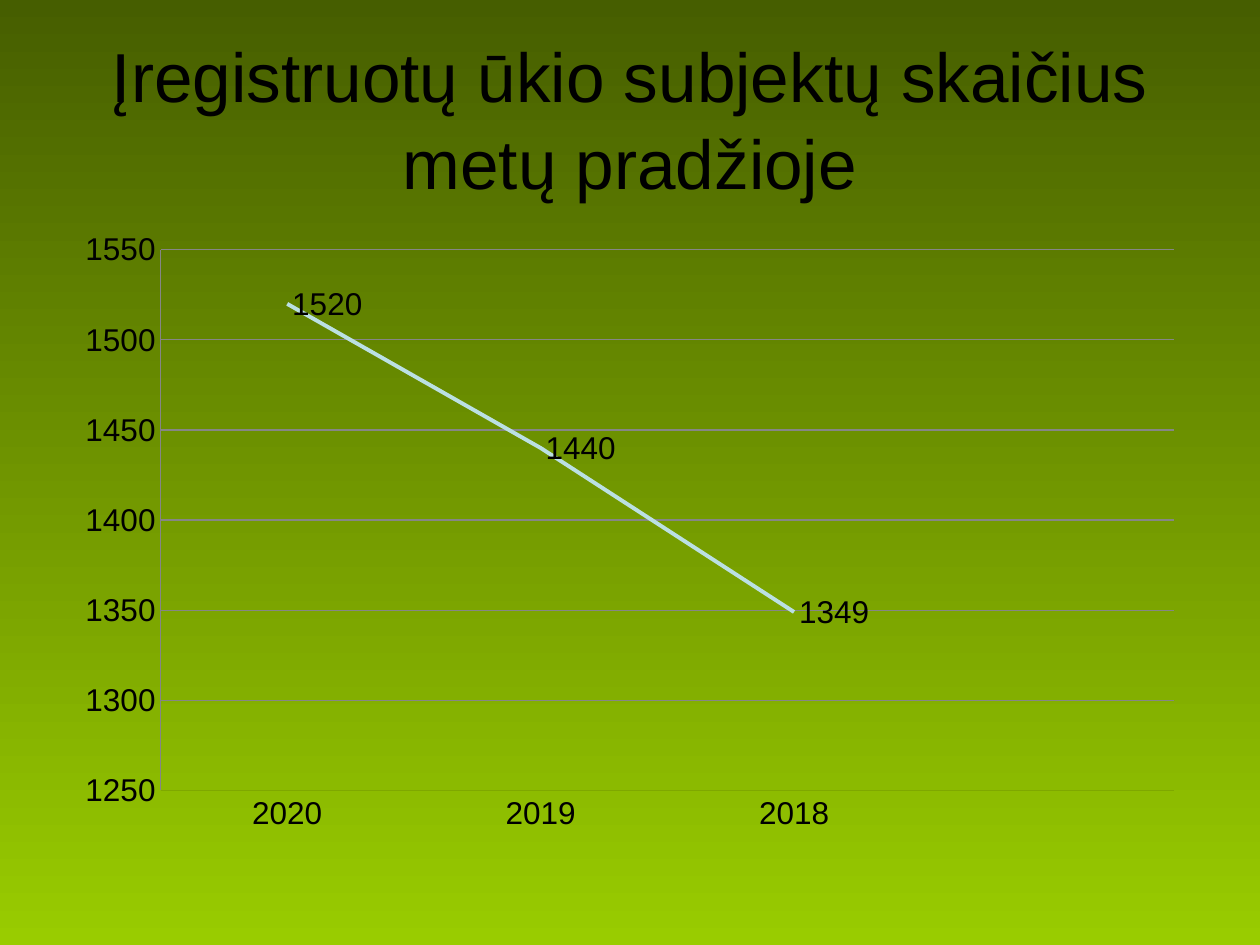
import pptx
import pptx.chart.data
import pptx.dml.color
import pptx.enum.chart
import pptx.enum.text
import pptx.util
from lxml import etree

Pt = pptx.util.Pt
RGBColor = pptx.dml.color.RGBColor

BLACK = RGBColor(0x00, 0x00, 0x00)
DARK_GREEN = RGBColor(0x46, 0x5E, 0x00)
LIME = RGBColor(0x99, 0xCC, 0x00)
BASELINE_GREEN = RGBColor(0x7F, 0xA8, 0x00)
GRID_GREY = RGBColor(0x86, 0x86, 0x86)
PALE_BLUE = RGBColor(0xBB, 0xE0, 0xE3)


class Deck:
    font = "Arial"
    title_size = Pt(39.6)
    chart_size = Pt(18)

    def __init__(self, width, height):
        self.presentation = pptx.Presentation()
        self.presentation.slide_width = width
        self.presentation.slide_height = height
        self.slide = None

    def add_slide(self, top_color, bottom_color):
        self.slide = self.presentation.slides.add_slide(self.presentation.slide_layouts[6])
        backdrop = self.slide.background.fill
        backdrop.gradient()
        backdrop.gradient_angle = 270
        for stop, color in zip(backdrop.gradient_stops, (top_color, bottom_color)):
            stop.color.rgb = color

    def style_font(self, font, size):
        font.name = self.font
        font.size = size
        font.color.rgb = BLACK

    def add_title(self, text, left, top, width, height):
        frame = self.slide.shapes.add_textbox(left, top, width, height).text_frame
        frame.word_wrap = True
        frame.vertical_anchor = pptx.enum.text.MSO_ANCHOR.MIDDLE
        frame.text = text
        heading = frame.paragraphs[0]
        heading.alignment = pptx.enum.text.PP_ALIGN.CENTER
        heading.line_spacing = 1.05
        self.style_font(heading.runs[0].font, self.title_size)

    def add_line_chart(self, years, name, counts, left, top, width, height):
        data = pptx.chart.data.CategoryChartData()
        data.categories = years
        data.add_series(name, counts)
        chart = self.slide.shapes.add_chart(
            pptx.enum.chart.XL_CHART_TYPE.LINE, left, top, width, height, data).chart
        chart.has_title = False
        chart.has_legend = False
        self.style_font(chart.font, self.chart_size)
        self.style_axis(chart.category_axis, BASELINE_GREEN)
        self.style_axis(chart.value_axis, GRID_GREY)
        self.style_scale(chart.value_axis, 1250, 1550, 50)
        self.place_plot(chart, x=0.086, y=0.047, w=0.894, h=0.867)

        plot = chart.plots[0]
        plot.vary_by_categories = False
        plot.has_data_labels = True
        labels = plot.data_labels
        labels.show_value = True
        labels.position = pptx.enum.chart.XL_LABEL_POSITION.RIGHT
        self.style_font(labels.font, self.chart_size)
        trend = plot.series[0]
        trend.smooth = False
        trend.format.line.color.rgb = PALE_BLUE
        trend.format.line.width = Pt(2.25)

    def style_axis(self, axis, color):
        axis.major_tick_mark = pptx.enum.chart.XL_TICK_MARK.NONE
        axis.minor_tick_mark = pptx.enum.chart.XL_TICK_MARK.NONE
        axis.format.line.color.rgb = color
        axis.format.line.width = Pt(0.75)

    def style_scale(self, axis, low, high, step):
        axis.minimum_scale = low
        axis.maximum_scale = high
        axis.major_unit = step
        axis.has_major_gridlines = True
        axis.major_gridlines.format.line.color.rgb = GRID_GREY
        axis.major_gridlines.format.line.width = Pt(0.75)

    def place_plot(self, chart, **fractions):
        """Fix the inner plot area, in fractions of the chart frame."""
        plot_area = chart.plots[0]._element.getparent()
        namespace = etree.QName(plot_area).namespace
        for old in plot_area.findall(f"{{{namespace}}}layout"):
            plot_area.remove(old)
        layout = etree.Element(f"{{{namespace}}}layout")
        manual = etree.SubElement(layout, f"{{{namespace}}}manualLayout")
        settings = {"layoutTarget": "inner", "xMode": "edge", "yMode": "edge", **fractions}
        for tag, value in settings.items():
            etree.SubElement(manual, f"{{{namespace}}}{tag}", val=str(value))
        plot_area.insert(0, layout)

    def save(self):
        self.presentation.save("out.pptx")


def main():
    deck = Deck(Pt(720), Pt(540))
    deck.add_slide(DARK_GREEN, LIME)
    deck.add_title("Įregistruotų ūkio subjektų skaičius metų pradžioje",
                   Pt(36), Pt(21.6), Pt(648), Pt(90))
    deck.add_line_chart(["2020", "2019", "2018", ""], "Series 1", [1520, 1440, 1349, None],
                        Pt(36), Pt(126), Pt(648), Pt(356.4))
    deck.save()


if __name__ == "__main__":
    main()
